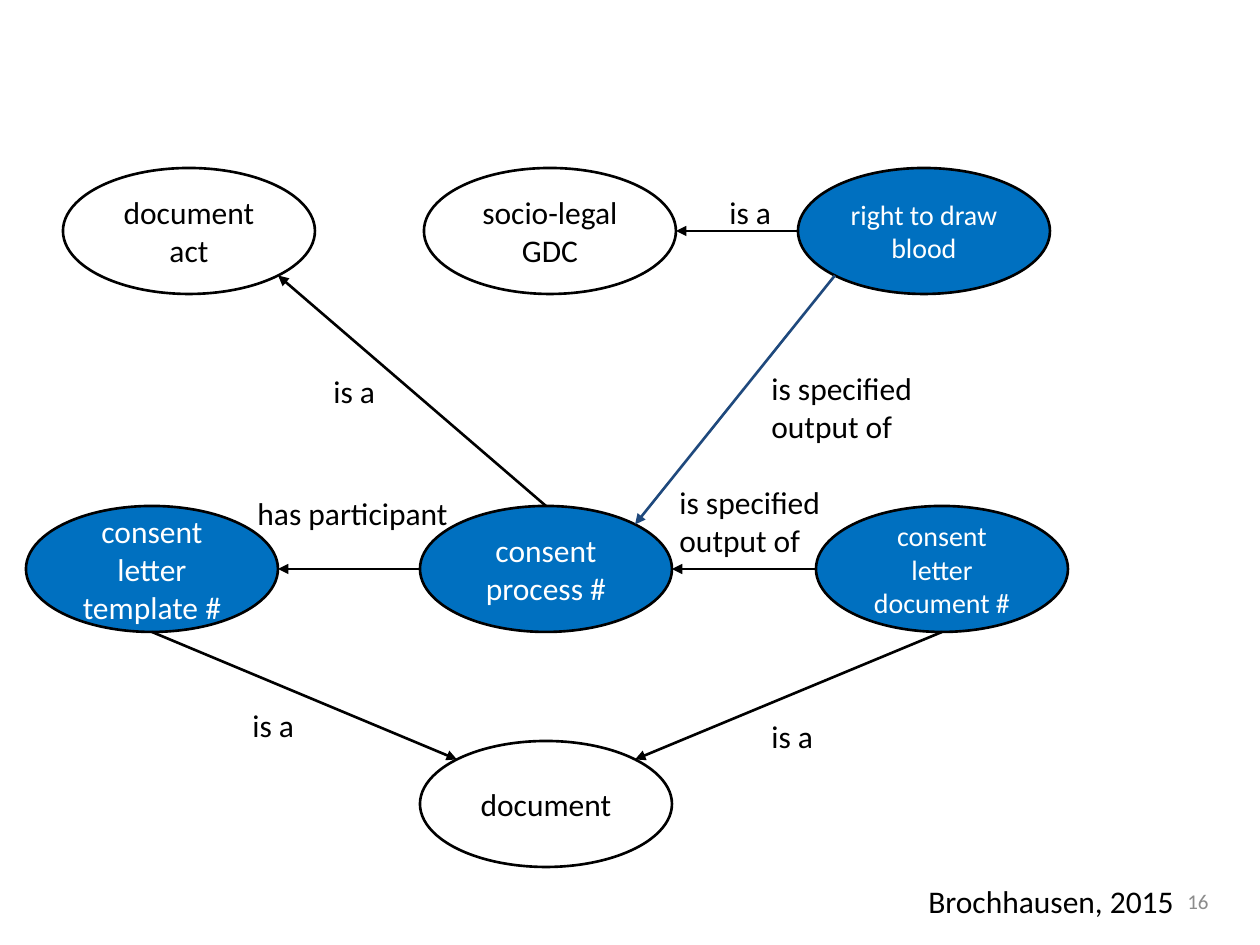
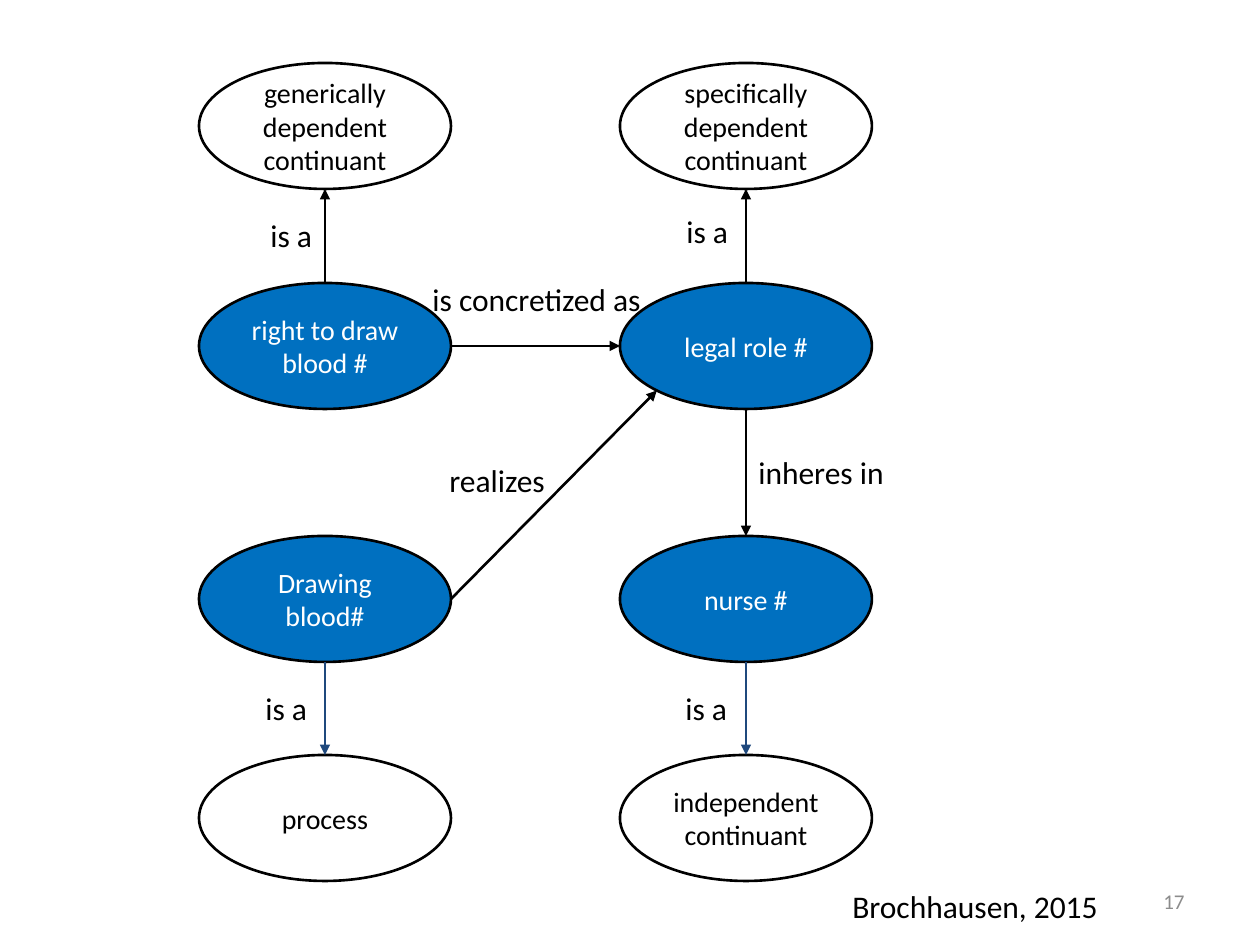
"""Build two ontology diagrams of consent and blood drawing."""
from math import sqrt
from lxml import etree
from pptx import Presentation
from pptx.dml.color import RGBColor
from pptx.enum import shapes, text
from pptx.oxml.ns import qn
from pptx.util import Emu, Pt

HUE = {"blue": "0070C0", "navy": "1F497D", "black": "000000",
       "white": "FFFFFF", "grey": "8C8C8C"}
FONT = "Calibri"
PX = 914400 / 126
WIDE, HIGH = 252, 126
LINE, PAD = 38, 13
LEFT, RIGHT = 199, 620
ROWS = 63, 283, 536, 755

DIAG = (1 - sqrt(0.5)) / 2
SITES = {"top": (0, 0.5, 0), "left": (2, 0, 0.5),
         "low left": (3, DIAG, 1 - DIAG), "foot": (4, 0.5, 1),
         "low right": (5, 1 - DIAG, 1 - DIAG), "right": (6, 1, 0.5),
         "high right": (7, 1 - DIAG, DIAG), "high left": (1, DIAG, DIAG)}

# Each node: words, left, top, fill, size. Each arrow: from, site, to, site, colour.
SLIDES = [
    {
        "nodes": {
            "form": ("consent letter template #", 26, 506, "blue", 18),
            "consent": ("consent process #", 420, 506, "blue", 18),
            "letter": ("consent letter document #", 816, 506, "blue", 16),
            "right": ("right to draw blood", 798, 168, "blue", 16),
            "act": ("document act", 63, 168, None, 18),
            "paper": ("document", 420, 741, None, 18),
            "social": ("socio-legal GDC", 424, 168, None, 18),
        },
        "arrows": [
            ("consent", "left", "form", "right", "black"),
            ("letter", "left", "consent", "right", "black"),
            ("right", "low left", "consent", "high right", "navy"),
            ("consent", "top", "act", "low right", "black"),
            ("letter", "foot", "paper", "high right", "black"),
            ("form", "foot", "paper", "high left", "black"),
            ("right", "left", "social", "right", "black"),
        ],
        "labels": [
            ("has participant", 245, 488, 218),
            ("is specified\noutput of", 667, 477, 168),
            ("is specified\noutput of", 759, 363, 168),
            ("is a", 717, 187, 68),
            ("is a", 321, 366, 68),
            ("is a", 759, 711, 68),
            ("is a", 240, 700, 68),
        ],
        "credit": ("Brochhausen, 2015", 916, 876, 305),
        "number": ("16", 927, 876, 294),
    },
    {
        "nodes": {
            "right": ("right to draw blood #", LEFT, ROWS[1], "blue", 16),
            "generic": ("generically dependent continuant", LEFT, ROWS[0], "white", 16),
            "role": ("legal role #", RIGHT, ROWS[1], "blue", 16),
            "special": ("specifically dependent continuant", RIGHT, ROWS[0], "white", 16),
            "nurse": ("nurse #", RIGHT, ROWS[2], "blue", 16),
            "draw": ("Drawing blood#", LEFT, ROWS[2], "blue", 16),
            "thing": ("independent\vcontinuant", RIGHT, ROWS[3], "white", 16),
            "process": ("process", LEFT, ROWS[3], "white", 16),
        },
        "arrows": [
            ("right", "top", "generic", "foot", "black"),
            ("role", "top", "special", "foot", "black"),
            ("right", "right", "role", "left", "black"),
            ("role", "foot", "nurse", "top", "black"),
            ("draw", "right", "role", "low left", "black"),
            ("nurse", "foot", "thing", "top", "navy"),
            ("draw", "foot", "process", "top", "navy"),
        ],
        "labels": [
            ("is concretized as", 420, 274, 236),
            ("inheres in", 746, 447, 152),
            ("realizes", 437, 455, 122),
            ("is a", 258, 210, 68),
            ("is a", 674, 206, 68),
            ("is a", 253, 683, 68),
            ("is a", 673, 683, 68),
        ],
        "credit": ("Brochhausen, 2015", 840, 881, 305),
        "number": ("17", 903, 876, 294),
    },
]


def emu(*px):
    return [Emu(round(n * PX)) for n in px]


def tint(name):
    return RGBColor.from_string(HUE[name])


def write(frame, words, size, hue, align):
    for n, row in enumerate(words.split("\n")):
        para = frame.add_paragraph() if n else frame.paragraphs[0]
        para.alignment = align
        for m, part in enumerate(row.split("\v")):
            if m:
                para.add_line_break()
            run = para.add_run()
            run.text = part
            run.font.name, run.font.size = FONT, Pt(size)
            run.font.color.rgb = tint(hue)


def label(slide, words, left, top, width, size=18, hue="black",
          align=text.PP_ALIGN.LEFT, wrap=False, anchor=text.MSO_ANCHOR.TOP):
    high = PAD + LINE * len(words.split("\n"))
    frame = slide.shapes.add_textbox(*emu(left, top, width, high)).text_frame
    frame.word_wrap, frame.vertical_anchor = wrap, anchor
    write(frame, words, size, hue, align)


def node(slide, words, left, top, fill, size):
    oval = slide.shapes.add_shape(shapes.MSO_SHAPE.OVAL, *emu(left, top, WIDE, HIGH))
    oval.shadow.inherit = False
    if fill:
        oval.fill.solid()
        oval.fill.fore_color.rgb = tint(fill)
    else:
        oval.fill.background()
    oval.line.color.rgb, oval.line.width = tint("black"), Pt(1.5)
    oval.text_frame.vertical_anchor = text.MSO_ANCHOR.MIDDLE
    write(oval.text_frame, words, size, "white" if fill == "blue" else "black",
          text.PP_ALIGN.CENTER)
    return oval


def arrow(slide, ovals, start, out, end, into, hue):
    spots, ties = [], []
    for tag, key, site in (("a:stCxn", start, out), ("a:endCxn", end, into)):
        oval, (idx, x, y) = ovals[key], SITES[site]
        spots += [Emu(round(oval.left + x * oval.width)),
                  Emu(round(oval.top + y * oval.height))]
        ties.append((tag, oval.shape_id, idx))
    link = slide.shapes.add_connector(shapes.MSO_CONNECTOR.STRAIGHT, *spots)
    link.line.color.rgb, link.line.width = tint(hue), Pt(1.5)
    etree.SubElement(link.line._get_or_add_ln(), qn("a:tailEnd"), type="triangle")
    etree.SubElement(link.element.spPr, qn("a:effectLst"))
    base = link.element.find(".//" + qn("p:cNvCxnSpPr"))
    for tag, num, idx in ties:
        etree.SubElement(base, qn(tag), id=str(num), idx=str(idx))


def main():
    deck = Presentation()
    deck.slide_width, deck.slide_height = emu(1260, 945)
    for data in SLIDES:
        slide = deck.slides.add_slide(deck.slide_layouts[6])
        label(slide, *data["number"], size=12, hue="grey", wrap=True,
              align=text.PP_ALIGN.RIGHT, anchor=text.MSO_ANCHOR.MIDDLE)
        ovals = {key: node(slide, *part) for key, part in data["nodes"].items()}
        for part in data["arrows"]:
            arrow(slide, ovals, *part)
        for part in data["labels"]:
            label(slide, *part)
        label(slide, *data["credit"], wrap=True)
    deck.save("out.pptx")


if __name__ == "__main__":
    main()
